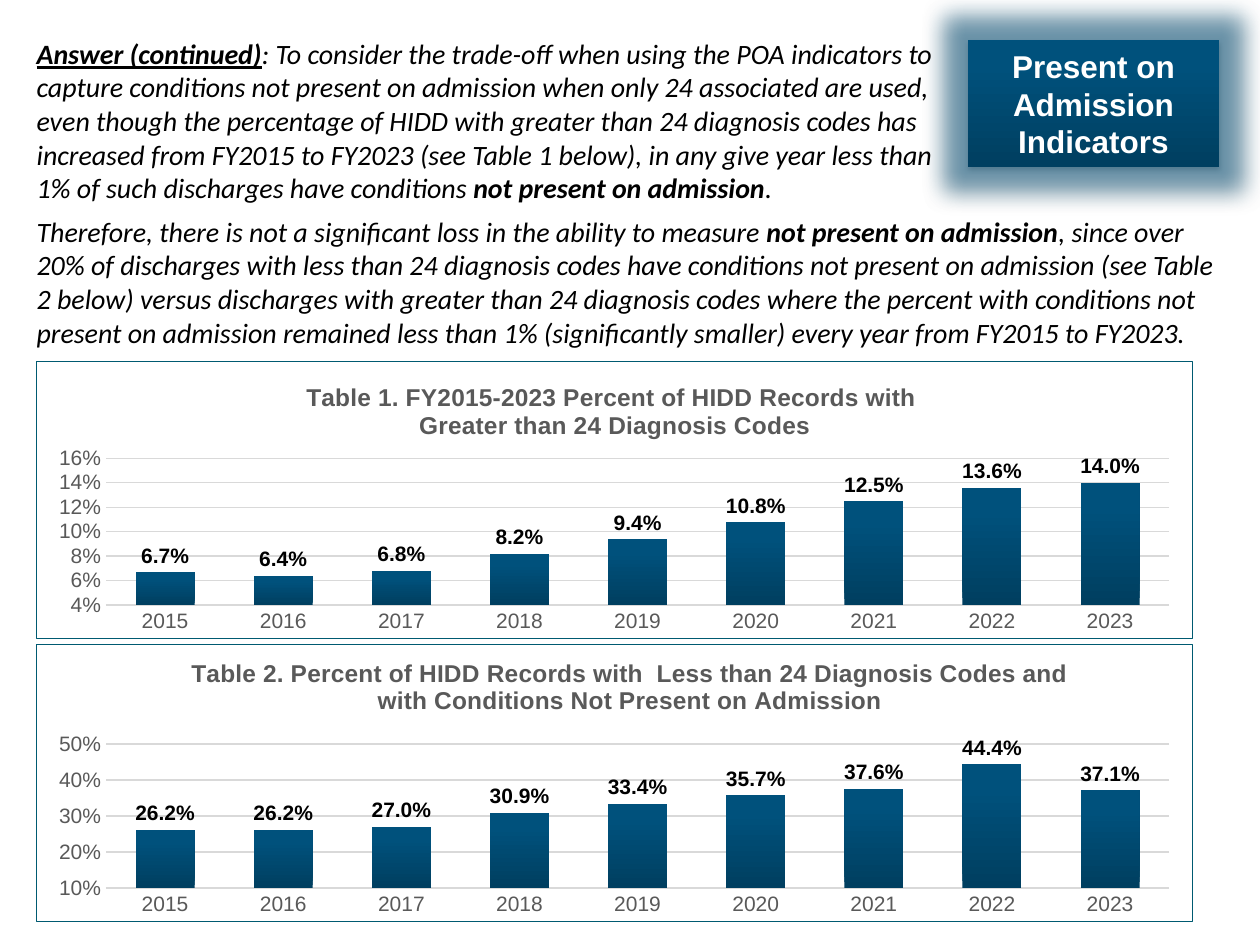
from dataclasses import dataclass

from lxml import etree
from pptx import Presentation
from pptx.chart.data import CategoryChartData
from pptx.dml.color import RGBColor
from pptx.enum.chart import XL_CHART_TYPE, XL_LABEL_POSITION, XL_TICK_MARK
from pptx.enum.text import MSO_ANCHOR, MSO_AUTO_SIZE, PP_ALIGN
from pptx.oxml import parse_xml
from pptx.oxml.ns import nsdecls, qn
from pptx.util import Emu, Pt

COLUMN = XL_CHART_TYPE.COLUMN_CLUSTERED
OUTSIDE_END = XL_LABEL_POSITION.OUTSIDE_END
NO_TICK = XL_TICK_MARK.NONE
TOP, MIDDLE = MSO_ANCHOR.TOP, MSO_ANCHOR.MIDDLE
NO_FIT = MSO_AUTO_SIZE.NONE
LEFT, CENTER = PP_ALIGN.LEFT, PP_ALIGN.CENTER

EMU_PER_PX = 914400 / 126
COLORS = {
    "text": "000000", "white": "FFFFFF", "gray": "595959", "grid": "D9D9D9",
    "border": "005A71", "dark": "003F60", "blue": "00517C",
}
YEARS = [str(year) for year in range(2015, 2024)]


@dataclass
class Box:
    x: int
    y: int
    w: int
    h: int


@dataclass
class Span:
    text: str
    bold: bool = False
    underline: bool = False


@dataclass
class ChartSpec:
    box: Box
    title: str
    title_at: tuple[float, float]
    plot_at: tuple[float, float, float, float]
    values: list[float]
    low: float
    high: float
    step: float


ANSWER = [
    Span("Answer (continued)", bold=True, underline=True),
    Span(": To consider the trade-off when using the POA indicators to capture conditions "
         "not present on admission when only 24 associated are used, even though the "
         "percentage of HIDD with greater than 24 diagnosis codes has increased from FY2015 "
         "to FY2023 (see Table 1 below), in any give year less than 1% of such discharges "
         "have conditions "),
    Span("not present on admission", bold=True),
    Span("."),
]
CONCLUSION = [
    Span("Therefore, there is not a significant loss in the ability to measure "),
    Span("not present on admission", bold=True),
    Span(", since over 20% of discharges with less than 24 diagnosis codes have conditions "
         "not present on admission (see Table 2 below) versus discharges with greater than "
         "24 diagnosis codes where the percent with conditions not present on admission "
         "remained less than 1% (significantly smaller) every year from FY2015 to FY2023."),
]
CHARTS = [
    ChartSpec(
        Box(36, 361, 1157, 278),
        "Table 1. FY2015-2023 Percent of HIDD Records with \nGreater than 24 Diagnosis Codes",
        (0.23, 0.06), (0.06, 0.35, 0.92, 0.53),
        [0.067, 0.064, 0.068, 0.082, 0.094, 0.108, 0.125, 0.136, 0.140],
        0.04, 0.16, 0.02),
    ChartSpec(
        Box(36, 644, 1157, 278),
        "Table 2. Percent of HIDD Records with  Less than 24 Diagnosis Codes and "
        "with Conditions Not Present on Admission",
        (0.13, 0.03), (0.06, 0.36, 0.92, 0.52),
        [0.262, 0.262, 0.270, 0.309, 0.334, 0.357, 0.376, 0.444, 0.371],
        0.1, 0.5, 0.1),
]


def px(n: int) -> Emu:
    return Emu(round(n * EMU_PER_PX))


def rgb(name: str) -> RGBColor:
    return RGBColor.from_string(COLORS[name])


def place(sp, box: Box) -> None:
    sp.left, sp.top, sp.width, sp.height = map(px, (box.x, box.y, box.w, box.h))


def style_font(font, size: int, color: str, name: str = "Arial", bold: bool = False) -> None:
    font.size, font.name, font.bold = Pt(size), name, bold
    font.color.rgb = rgb(color)


def fill_gradient(fill) -> None:
    """Dark at the bottom, blue from four fifths of the height up."""
    fill.gradient()
    fill.gradient_angle = 90
    for stop, color, position in zip(fill.gradient_stops, ("dark", "blue"), (0, 0.8)):
        stop.color.rgb, stop.position = rgb(color), position


def add_heading(sp, box: Box, text: str) -> None:
    place(sp, box)
    fill_gradient(sp.fill)
    sp._element.spPr.append(parse_xml(
        f'<a:effectLst {nsdecls("a")}>'
        f'<a:glow rad="{Pt(27)}"><a:srgbClr val="{COLORS["blue"]}">'
        '<a:alpha val="50000"/></a:srgbClr></a:glow>'
        f'<a:outerShdw blurRad="{Pt(3.1)}" dist="{Pt(1.8)}" dir="5400000" rotWithShape="0">'
        f'<a:srgbClr val="{COLORS["text"]}"><a:alpha val="35000"/></a:srgbClr>'
        '</a:outerShdw></a:effectLst>'))
    tf = sp.text_frame
    tf.text = text
    tf.word_wrap, tf.auto_size, tf.vertical_anchor = True, NO_FIT, MIDDLE
    p = tf.paragraphs[0]
    p.alignment = CENTER
    style_font(p.runs[0].font, 18, "white", bold=True)


def add_body(sp, box: Box, spans: list[Span]) -> None:
    place(sp, box)
    tf = sp.text_frame
    tf.word_wrap, tf.auto_size, tf.vertical_anchor = True, NO_FIT, TOP
    p = tf.paragraphs[0]
    p.alignment, p.space_before, p.space_after = LEFT, Pt(0), Pt(8)
    pPr = p._p.get_or_add_pPr()
    pPr.set("marL", "0")
    pPr.set("indent", "0")
    etree.SubElement(pPr, qn("a:buNone"))
    for span in spans:
        r = p.add_run()
        r.text = span.text
        style_font(r.font, 16, "text", "Calibri", span.bold)
        r.font.italic, r.font.underline = True, span.underline


def layout_xml(at: tuple[float, ...], inner: bool = False):
    """Manual chart layout from fractions: x, y and optionally w, h."""
    target = '<c:layoutTarget val="inner"/>' if inner else ""
    modes = '<c:xMode val="edge"/><c:yMode val="edge"/>'
    sizes = "".join(f'<c:{key} val="{value}"/>' for key, value in zip("xywh", at))
    return parse_xml(f'<c:layout {nsdecls("c")}><c:manualLayout>{target}{modes}{sizes}'
                     '</c:manualLayout></c:layout>')


def set_layout(parent, layout, index: int) -> None:
    for old in parent.findall(qn("c:layout")):
        parent.remove(old)
    parent.insert(index, layout)


def style_axis(axis) -> None:
    axis.major_tick_mark = axis.minor_tick_mark = NO_TICK
    style_font(axis.tick_labels.font, 12, "gray")


def add_column_chart(s, spec: ChartSpec) -> None:
    data = CategoryChartData(number_format="0.0%")
    data.categories = YEARS
    data.add_series("Series 1", spec.values)
    b = spec.box
    chart = s.shapes.add_chart(COLUMN, px(b.x), px(b.y), px(b.w), px(b.h), data).chart
    style_font(chart.font, 10, "text")
    chart.has_legend = False
    chart.has_title = True
    tf = chart.chart_title.text_frame
    tf.text = spec.title
    for p in tf.paragraphs:
        style_font(p.runs[0].font, 14, "gray", bold=True)
    set_layout(chart.chart_title._element, layout_xml(spec.title_at), 1)

    cat, val = chart.category_axis, chart.value_axis
    style_axis(cat)
    cat.format.line.color.rgb, cat.format.line.width = rgb("grid"), Pt(1)
    style_axis(val)
    val.format.line.fill.background()
    val.minimum_scale, val.maximum_scale, val.major_unit = spec.low, spec.high, spec.step
    val.tick_labels.number_format, val.tick_labels.number_format_is_linked = "0%", False
    grid = val.major_gridlines.format.line
    grid.color.rgb, grid.width = rgb("grid"), Pt(0.75)

    plot = chart.plots[0]
    plot.gap_width, plot.overlap, plot.vary_by_categories = 100, -24, False
    fill_gradient(plot.series[0].format.fill)
    labels = plot.series[0].data_labels
    labels.show_value, labels.position = True, OUTSIDE_END
    labels.number_format, labels.number_format_is_linked = "0.0%", False
    style_font(labels.font, 12, "text", bold=True)

    body = chart._chartSpace.find(qn("c:chart"))
    set_layout(body.find(qn("c:plotArea")), layout_xml(spec.plot_at, inner=True), 0)
    body.addnext(parse_xml(
        f'<c:spPr {nsdecls("c", "a")}><a:noFill/><a:ln w="{Pt(0.75)}"><a:solidFill>'
        f'<a:srgbClr val="{COLORS["border"]}"/></a:solidFill></a:ln></c:spPr>'))


def main() -> None:
    prs = Presentation()
    prs.slide_width, prs.slide_height = px(1260), px(945)
    s = prs.slides.add_slide(prs.slide_layouts[3])
    heading, answer, conclusion = list(s.placeholders)[:3]
    add_heading(heading, Box(968, 40, 251, 127), "Present on Admission Indicators")
    add_body(answer, Box(24, 30, 929, 183), ANSWER)
    add_body(conclusion, Box(24, 208, 1212, 149), CONCLUSION)
    for spec in CHARTS:
        add_column_chart(s, spec)
    prs.save("out.pptx")


if __name__ == "__main__":
    main()
